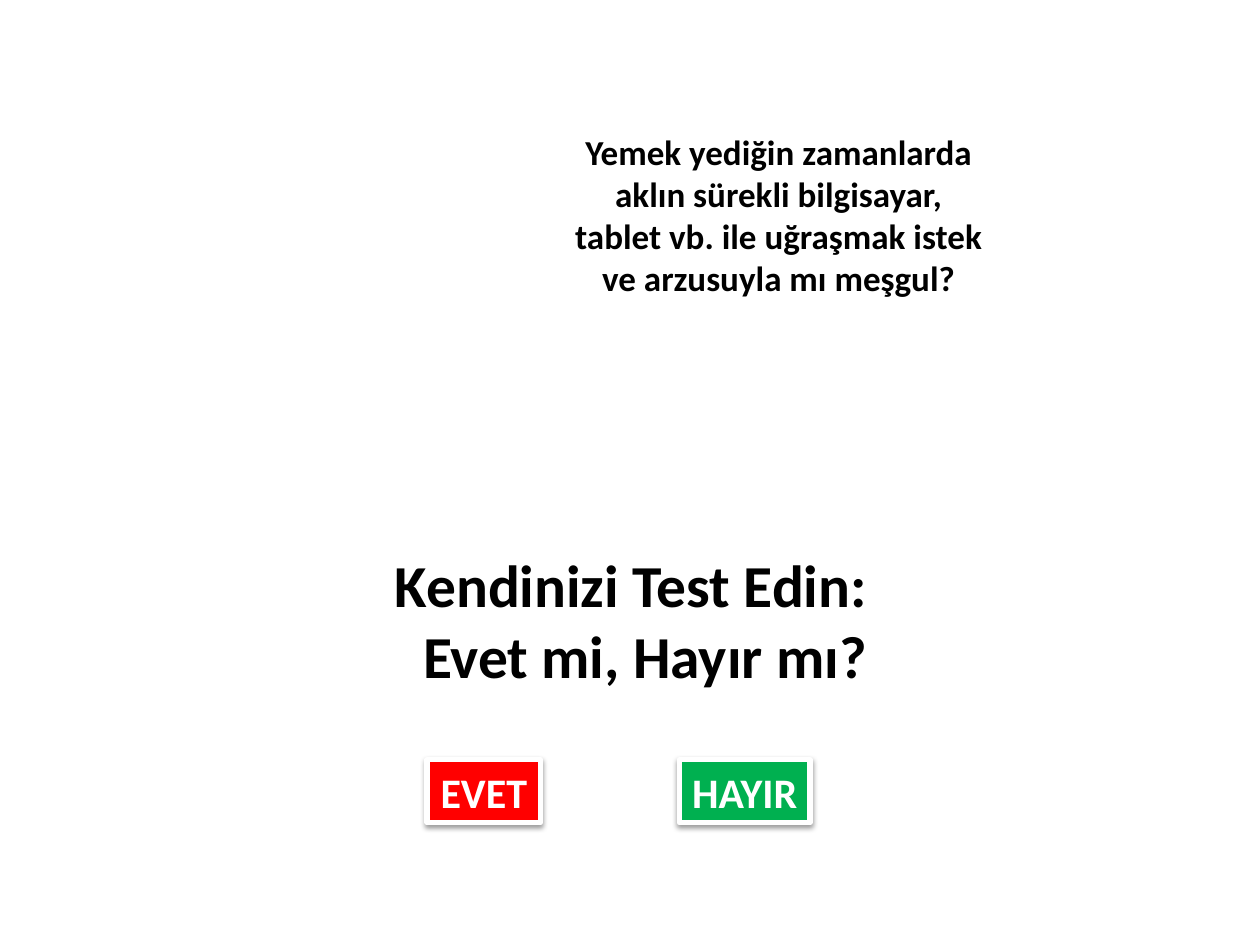
from lxml import etree
from pptx import Presentation
from pptx.dml.color import RGBColor
from pptx.enum.shapes import MSO_SHAPE
from pptx.enum.text import MSO_ANCHOR, MSO_AUTO_SIZE, PP_ALIGN
from pptx.oxml.ns import qn
from pptx.util import Inches, Pt

RECTANGLE = MSO_SHAPE.RECTANGLE
TOP, MIDDLE = MSO_ANCHOR.TOP, MSO_ANCHOR.MIDDLE
FIT_SHAPE = MSO_AUTO_SIZE.SHAPE_TO_FIT_TEXT
CENTER, RIGHT = PP_ALIGN.CENTER, PP_ALIGN.RIGHT

WIDTH, HEIGHT = Inches(10), Inches(7.5)
FONT = "Calibri"
BLACK, WHITE, RED, GREEN = "000000", "FFFFFF", "FF0000", "00B050"

QUESTION = [
    "Yemek yediğin zamanlarda",
    "aklın sürekli bilgisayar,",
    "tablet vb. ile uğraşmak istek",
    "ve arzusuyla mı meşgul?",
]
# Label, fill, left and width as percentages of the answer row
ANSWERS = [("EVET", RED, 0, 29.6), ("HAYIR", GREEN, 65.8, 34.2)]


def color(hex_code):
    return RGBColor.from_string(hex_code)


def share(left, top, width, height):
    """Turn percentages of the slide into a box of lengths."""
    return (int(WIDTH * left / 100), int(HEIGHT * top / 100),
            int(WIDTH * width / 100), int(HEIGHT * height / 100))


def write(shape, lines, size, ink, align, anchor=TOP, wrap=True):
    frame = shape.text_frame
    frame.text = "\n".join(lines)
    frame.word_wrap = wrap
    frame.auto_size = FIT_SHAPE
    frame.vertical_anchor = anchor
    for paragraph in frame.paragraphs:
        paragraph.alignment = align
        for run in paragraph.runs:
            run.font.name = FONT
            run.font.size = Pt(size)
            run.font.bold = True
            run.font.color.rgb = color(ink)


def add_soft_shadow(shape):
    shape.shadow.inherit = False
    effects = shape._element.spPr.find(qn("a:effectLst"))
    shadow = etree.SubElement(
        effects, qn("a:outerShdw"), blurRad=str(Pt(3.1)), dist=str(Pt(1.6)),
        dir="5400000", rotWithShape="0")
    tint = etree.SubElement(shadow, qn("a:srgbClr"), val=BLACK)
    etree.SubElement(tint, qn("a:alpha"), val="38000")


def place_title(slide, box):
    title = slide.shapes.title
    title.left, title.top, title.width, title.height = box
    write(title, ["Kendinizi Test Edin: Evet mi, Hayır mı?"], 34, BLACK, RIGHT)


def add_question(slide, box):
    question = slide.shapes.add_textbox(*box)
    write(question, QUESTION, 20, BLACK, CENTER)


def add_answers(slide, box):
    left, top, width, height = box
    for label, fill, offset, span in ANSWERS:
        answer = slide.shapes.add_shape(
            RECTANGLE, left + int(width * offset / 100), top,
            int(width * span / 100), height)
        answer.fill.solid()
        answer.fill.fore_color.rgb = color(fill)
        answer.line.color.rgb = color(WHITE)
        answer.line.width = Pt(3)
        add_soft_shadow(answer)
        write(answer, [label], 24, WHITE, CENTER, MIDDLE, wrap=False)


def main():
    deck = Presentation()
    deck.slide_width, deck.slide_height = WIDTH, HEIGHT
    slide = deck.slides.add_slide(deck.slide_layouts[5])  # title only

    # Heading, question, then the two answers
    place_title(slide, share(27.5, 57.33, 42.3, 16.67))
    add_question(slide, share(42.9, 13.2, 37.8, 19.33))
    add_answers(slide, share(33.9, 80.4, 30.4, 6.67))

    deck.save("out.pptx")


if __name__ == "__main__":
    main()
